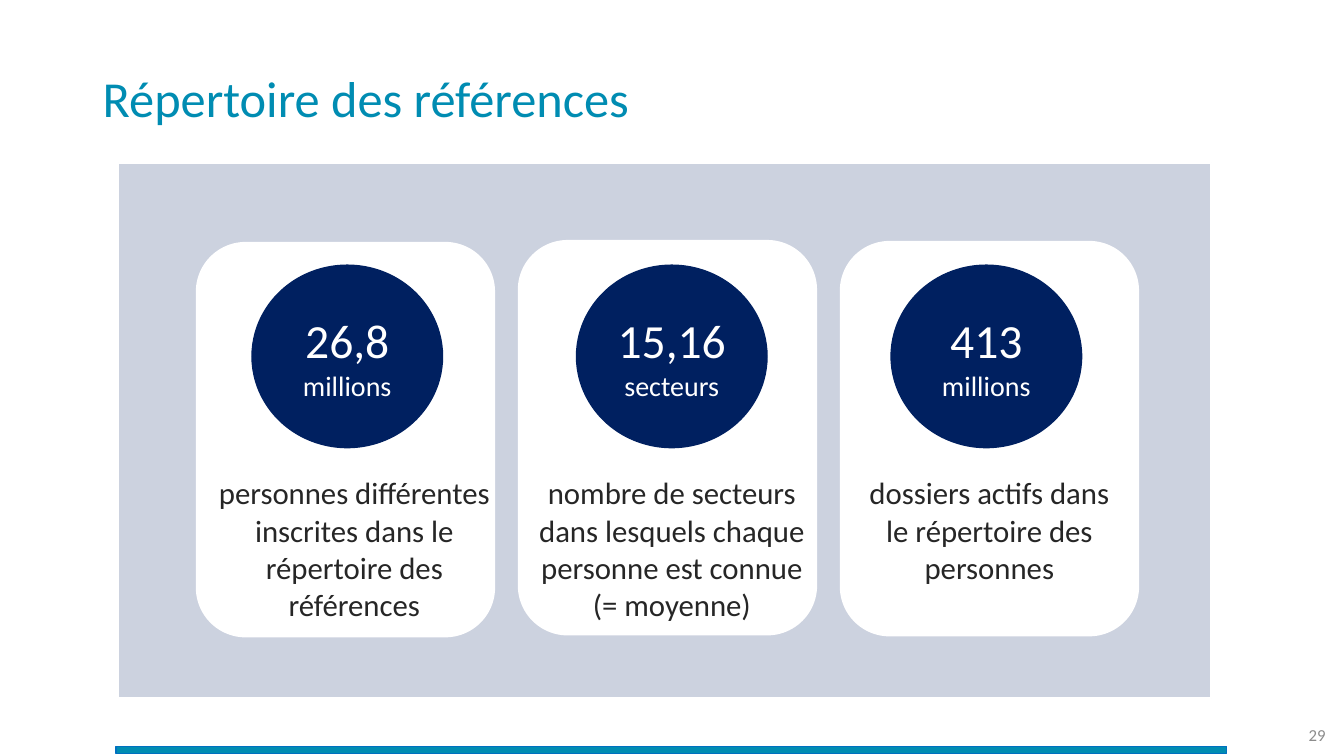
from lxml import etree
from pptx import Presentation
from pptx.dml.color import RGBColor
from pptx.enum.shapes import MSO_SHAPE as Shape
from pptx.enum.text import MSO_ANCHOR as Anchor, PP_ALIGN as Align
from pptx.oxml.ns import qn
from pptx.util import Pt

FONT = "Calibri"
COLORS = {
    "blue": "008CB2",
    "edge": "0070C0",
    "navy": "002060",
    "white": "FFFFFF",
    "text": "262626",
    "gray": "8C8C8C",
}
NO_GRID_STYLE = "{2D5ABB26-0587-4C30-8999-92F81FD0307C}"
CARD_LEFT, CARD_PITCH, CARD_WIDTH, CARD_HEIGHT = 139.9, 230, 213.8, 282.5

# Card top, circle left, figure, unit, description
CARDS = [
    (172.8, 180, "26,8", "millions",
     "personnes différentes inscrites dans le répertoire des références"),
    (171.4, 411.8, "15,16", "secteurs",
     "nombre de secteurs dans lesquels chaque personne est connue\v(= moyenne)"),
    (172.1, 636.5, "413", "millions",
     "dossiers actifs dans\vle répertoire des personnes"),
]


def color(name):
    return RGBColor.from_string(COLORS[name])


def write(frame, *runs, align=Align.LEFT, anchor=Anchor.MIDDLE, spacing=None):
    """Fill a text frame with one paragraph of (text, size, color) runs."""
    frame.word_wrap = True
    frame.vertical_anchor = anchor
    paragraph = frame.paragraphs[0]
    paragraph.alignment = align
    paragraph.line_spacing = spacing
    for text, size, color_name in runs:
        for index, line in enumerate(text.split("\v")):
            if index:
                paragraph.add_line_break()
            run = paragraph.add_run()
            run.text = line
            run.font.name = FONT
            run.font.size = Pt(size)
            run.font.color.rgb = color(color_name)


def add_block(slide, kind, box, fill, line=None, opacity=None):
    shape = slide.shapes.add_shape(kind, *map(Pt, box))
    shape.shadow.inherit = False
    shape.fill.solid()
    shape.fill.fore_color.rgb = color(fill)
    if opacity:
        fill_color = shape.element.spPr.find(qn("a:solidFill"))[0]
        etree.SubElement(fill_color, qn("a:alpha"), val=str(opacity * 1000))
    if line:
        shape.line.color.rgb = color(line)
        shape.line.width = Pt(1)
    else:
        shape.line.fill.background()
    return shape


def add_title(slide, text):
    title = slide.shapes.title
    title.left, title.top, title.width, title.height = map(Pt, (66.2, 20.2, 828, 104.4))
    write(title.text_frame, (text, 36, "blue"), spacing=0.9)


def add_circle(slide, left, figure, unit):
    circle = add_block(slide, Shape.FLOWCHART_CONNECTOR,
                       (left, 189.4, 136.1, 130.3), "navy", "navy")
    write(circle.text_frame, (figure + " ", 34, "white"), (unit, 20, "white"),
          align=Align.CENTER)


def add_descriptions(slide, descriptions):
    frame = slide.shapes.add_table(1, len(descriptions),
                                   *map(Pt, (139.7, 313.9, 680.4, 203.8)))
    frame.element.xpath(".//a:tableStyleId")[0].text = NO_GRID_STYLE
    table = frame.table
    table.first_row = table.horz_banding = False
    for cell, text in zip(table.rows[0].cells, descriptions):
        cell.fill.background()
        cell.margin_top = Pt(25.6)
        write(cell.text_frame, (text, 22, "text"), align=Align.CENTER, anchor=Anchor.TOP)
        cell.vertical_anchor = Anchor.TOP


def add_page_number(slide, number):
    box = slide.shapes.add_textbox(*map(Pt, (895, 510.5, 59, 28.8)))
    write(box.text_frame, (number, 12, "gray"), align=Align.RIGHT)


def main():
    presentation = Presentation()
    presentation.slide_width, presentation.slide_height = Pt(960), Pt(540)
    slide = presentation.slides.add_slide(presentation.slide_layouts[5])

    # Frame of the slide
    add_title(slide, "Répertoire des références")
    add_page_number(slide, "29")
    add_block(slide, Shape.RECTANGLE, (82.8, 533, 793.4, 5.4), "blue", "edge")

    # Tinted panel with the three cards
    add_block(slide, Shape.RECTANGLE, (84.6, 116.3, 780.5, 382.3), "navy", "white", 20)
    for index, (top, circle_left, figure, unit, _) in enumerate(CARDS):
        left = CARD_LEFT + index * CARD_PITCH
        add_block(slide, Shape.ROUNDED_RECTANGLE,
                  (left, top, CARD_WIDTH, CARD_HEIGHT), "white")
        add_circle(slide, circle_left, figure, unit)

    # Descriptions below the circles
    add_descriptions(slide, [card[-1] for card in CARDS])

    presentation.save("out.pptx")


if __name__ == "__main__":
    main()
